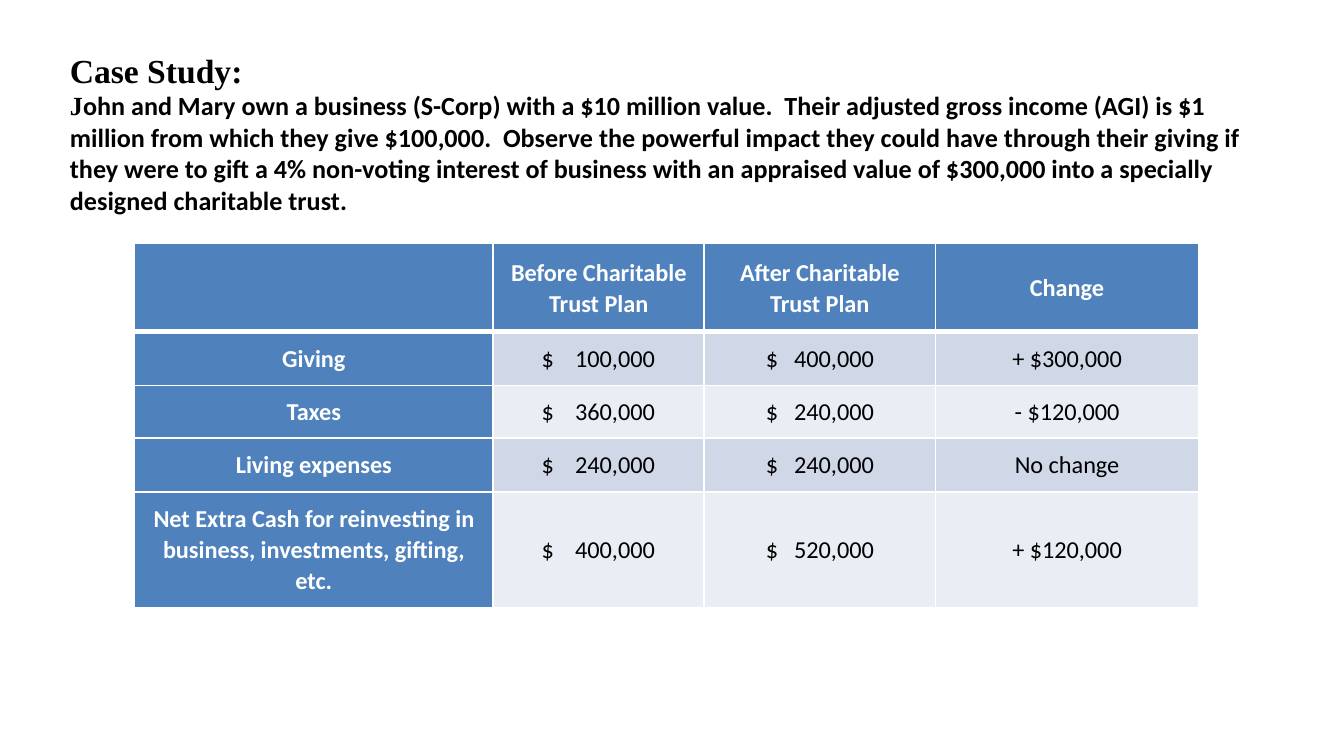
import pptx
import pptx.util
import pptx.dml.color
import pptx.enum.text
import pptx.oxml.ns
from lxml import etree

Inches, Pt = pptx.util.Inches, pptx.util.Pt
ALIGN = pptx.enum.text.PP_ALIGN
MIDDLE = pptx.enum.text.MSO_ANCHOR.MIDDLE
qn = pptx.oxml.ns.qn

BLUE, WHITE, BLACK = "4F81BD", "FFFFFF", "000000"
BANDS = ["D0D8E8", "E9EDF4"]
SERIF, SANS = "Times New Roman", "Calibri"

INTRO = [
    [("Case Study:", SERIF, 18)],
    [("J", SERIF, 14),
     ("ohn and Mary own a business (S-Corp) with a $10 million value.  Their "
      "adjusted gross income (AGI) is $1 million from which they give $100,000.  "
      "Observe the powerful impact they could have through their giving if they "
      "were to gift a 4% non-voting interest of business with an appraised value "
      "of $300,000 into a specially designed charitable trust.", SANS, 14)],
]
ROWS = [
    ["", "Before Charitable Trust Plan", "After Charitable Trust Plan", "Change"],
    ["Giving", "$\t100,000", "$\t400,000", "+ $300,000"],
    ["Taxes", "$\t360,000", "$\t240,000", "- $120,000"],
    ["Living expenses", "$\t240,000", "$\t240,000", "No change"],
    ["Net Extra Cash for reinvesting in business, investments, gifting, etc.",
     "$\t400,000", "$\t520,000", "+ $120,000"],
]
WIDTHS = [2.67, 1.57, 1.72, 1.96]
HEIGHTS = [0.66, 0.4, 0.39, 0.4, 0.86]
MONEY = {1: (0.36, 0.25), 2: (0.46, 0.21)}  # column: left inset, tab stop


def rgb(code):
    return pptx.dml.color.RGBColor.from_string(code)


def assign(obj, values):
    for name, value in values.items():
        setattr(obj, name, value)


def add_run(para, text, face, size, color, bold):
    run = para.add_run()
    run.text = text
    assign(run.font, {"name": face, "size": Pt(size), "bold": bold})
    run.font.color.rgb = rgb(color)


def add_edges(cell, top, bottom):
    """Draw white cell borders; top and bottom widths are in points."""
    props = cell._tc.get_or_add_tcPr()
    for tag, width in zip(("lnL", "lnR", "lnT", "lnB"), (1, 1, top, bottom)):
        line = etree.SubElement(props, qn("a:" + tag), w=str(Pt(width)))
        fill = etree.SubElement(line, qn("a:solidFill"))
        etree.SubElement(fill, qn("a:srgbClr"), val=WHITE)


def add_tab(para, stop):
    tabs = etree.SubElement(para._p.get_or_add_pPr(), qn("a:tabLst"))
    etree.SubElement(tabs, qn("a:tab"), pos=str(Inches(stop)), algn="l")


def fill_cell(cell, text, row, col):
    head = row == 0 or col == 0
    inset, stop = MONEY[col] if "\t" in text else (0.07, None)
    assign(cell, {"margin_left": Inches(inset), "margin_right": Inches(0.07),
                  "margin_top": 0, "margin_bottom": 0,
                  "vertical_anchor": MIDDLE})
    add_edges(cell, 3 if row == 1 else 1, 3 if row == 0 else 1)
    cell.fill.solid()
    cell.fill.fore_color.rgb = rgb(BLUE if head else BANDS[(row - 1) % 2])
    para = cell.text_frame.paragraphs[0]
    assign(para, {"alignment": ALIGN.LEFT if stop else ALIGN.CENTER,
                  "line_spacing": 1.05})
    if stop:
        add_tab(para, stop)
    if text:
        add_run(para, text, SANS, 13, WHITE if head else BLACK, head)


def add_intro(slide):
    title = slide.shapes.title
    assign(title, {"left": Inches(0.42), "top": Inches(0.31),
                   "width": Inches(9.08), "height": Inches(1.35)})
    frame = title.text_frame
    assign(frame, {"word_wrap": True, "vertical_anchor": MIDDLE,
                   "auto_size": pptx.enum.text.MSO_AUTO_SIZE.SHAPE_TO_FIT_TEXT})
    for i, parts in enumerate(INTRO):
        para = frame.add_paragraph() if i else frame.paragraphs[0]
        para.alignment = ALIGN.LEFT
        for text, face, size in parts:
            add_run(para, text, face, size, BLACK, True)


def add_plan(slide):
    table = slide.shapes.add_table(
        len(ROWS), len(WIDTHS), Inches(1), Inches(1.81),
        Inches(sum(WIDTHS)), Inches(sum(HEIGHTS))).table
    for column, width in zip(table.columns, WIDTHS):
        column.width = Inches(width)
    for r, (texts, height) in enumerate(zip(ROWS, HEIGHTS)):
        table.rows[r].height = Inches(height)
        for c, text in enumerate(texts):
            fill_cell(table.cell(r, c), text, r, c)


def main():
    deck = pptx.Presentation()
    wide = Inches(10)
    assign(deck, {"slide_width": wide, "slide_height": wide * 9 // 16})
    slide = deck.slides.add_slide(deck.slide_layouts[5])
    add_intro(slide)
    add_plan(slide)
    deck.save("out.pptx")


if __name__ == "__main__":
    main()
